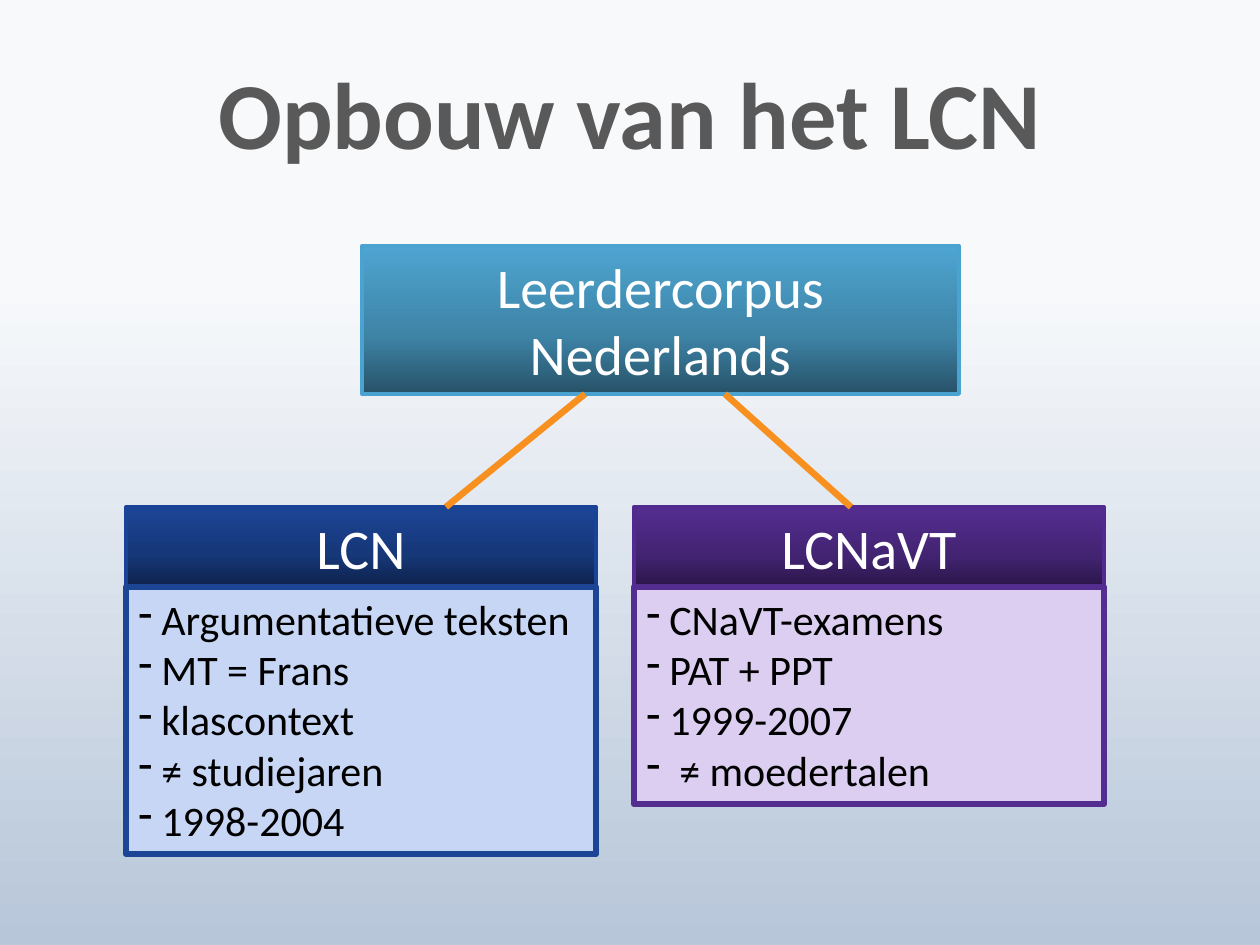
import copy

import pptx
import pptx.dml.color
import pptx.enum.shapes
import pptx.enum.text
import pptx.oxml.ns
import pptx.oxml.xmlchemy
import pptx.util

RGBColor = pptx.dml.color.RGBColor
PX = 914400 // 126
FONT = "Calibri"

WHITE = RGBColor(0xFF, 0xFF, 0xFF)
BLACK = RGBColor(0x00, 0x00, 0x00)
TITLE_GRAY = RGBColor(0x59, 0x59, 0x59)
ORANGE = RGBColor(0xF7, 0x90, 0x1E)
SKY_LINE = RGBColor(0x49, 0xA2, 0xD0)
BLUE = RGBColor(0x1C, 0x45, 0x96)
BLUE_LINE = RGBColor(0x18, 0x43, 0x96)
BLUE_PALE = RGBColor(0xC7, 0xD6, 0xF5)
PURPLE = RGBColor(0x54, 0x2D, 0x90)
PURPLE_LINE = RGBColor(0x52, 0x2A, 0x8F)
PURPLE_PALE = RGBColor(0xDB, 0xCE, 0xF0)

PAGE_STOPS = [(0.3, RGBColor(0xF7, 0xF9, 0xFB)), (1, RGBColor(0xB7, 0xC6, 0xD9))]
SKY_STOPS = [(0, RGBColor(0x4E, 0xA5, 0xD1)), (0.6, RGBColor(0x3E, 0x84, 0xA7)),
             (1, RGBColor(0x27, 0x52, 0x68))]
BLUE_STOPS = [(0, BLUE), (0.6, RGBColor(0x16, 0x37, 0x78)),
              (1, RGBColor(0x0E, 0x22, 0x4B))]
PURPLE_STOPS = [(0, PURPLE), (0.6, RGBColor(0x43, 0x24, 0x73)),
                (1, RGBColor(0x2A, 0x16, 0x48))]


def fill_downward(owner, fill, stops):
    """Give the fill a top-to-bottom gradient with any number of stops."""
    fill.gradient()
    fill.gradient_angle = 270
    stop_list = next(owner.element.iter(pptx.oxml.ns.qn("a:gsLst")))
    while len(stop_list) < len(stops):
        stop_list.append(copy.deepcopy(stop_list[0]))
    for stop, (position, color) in zip(fill.gradient_stops, stops):
        stop.position = position
        stop.color.rgb = color


def add_box(slide, bounds, line_color, line_width):
    shape = slide.shapes.add_shape(
        pptx.enum.shapes.MSO_SHAPE.RECTANGLE, *(value * PX for value in bounds))
    shape.shadow.inherit = False
    shape.line.color.rgb = line_color
    shape.line.width = pptx.util.Pt(line_width)
    shape.text_frame.word_wrap = True
    shape.text_frame.auto_size = pptx.enum.text.MSO_AUTO_SIZE.SHAPE_TO_FIT_TEXT
    shape.text_frame.vertical_anchor = pptx.enum.text.MSO_ANCHOR.TOP
    return shape


presentation = pptx.Presentation()
presentation.slide_width = pptx.util.Inches(10)
presentation.slide_height = pptx.util.Inches(7.5)
slide = presentation.slides.add_slide(presentation.slide_layouts[5])
fill_downward(slide, slide.background.fill, PAGE_STOPS)

# Title
title = slide.shapes.title
title.left, title.top, title.width, title.height = (
    value * PX for value in (126, 32, 1008, 174))
title.text_frame.vertical_anchor = pptx.enum.text.MSO_ANCHOR.MIDDLE
paragraph = title.text_frame.paragraphs[0]
paragraph.alignment = pptx.enum.text.PP_ALIGN.CENTER
paragraph.line_spacing = pptx.util.Pt(56)
run = paragraph.add_run()
run.text = "Opbouw van het LCN"
run.font.name = FONT
run.font.size = pptx.util.Pt(54)
run.font.bold = True
run.font.color.rgb = TITLE_GRAY

# Corpus and its two parts
headings = [
    ("Leerdercorpus Nederlands", (362, 246, 597, 148), SKY_STOPS, SKY_LINE),
    ("LCN", (126, 507, 470, 80), BLUE_STOPS, BLUE_LINE),
    ("LCNaVT", (634, 507, 470, 80), PURPLE_STOPS, PURPLE_LINE),
]
for text, bounds, stops, line_color in headings:
    heading = add_box(slide, bounds, line_color, 2.25)
    fill_downward(heading, heading.fill, stops)
    paragraph = heading.text_frame.paragraphs[0]
    paragraph.alignment = pptx.enum.text.PP_ALIGN.CENTER
    run = paragraph.add_run()
    run.text = text
    run.font.name = FONT
    run.font.size = pptx.util.Pt(32)
    run.font.color.rgb = WHITE

# Branches from the corpus to its parts
for start_x, end_x in [(585, 446), (725, 851)]:
    branch = slide.shapes.add_connector(
        pptx.enum.shapes.MSO_CONNECTOR.STRAIGHT,
        start_x * PX, 394 * PX, end_x * PX, 507 * PX)
    branch.line.color.rgb = ORANGE
    branch.line.width = pptx.util.Pt(3.75)
    branch.element.spPr.append(pptx.oxml.xmlchemy.OxmlElement("a:effectLst"))

# Features of each part: text and its indent in px
feature_lists = [
    ((126, 587, 470, 267), BLUE_PALE, BLUE,
     [("Argumentatieve teksten", 23), ("MT = Frans", 23), ("klascontext", 23),
      ("≠ studiejaren", 23), ("1998-2004", 23)]),
    ((634, 587, 470, 217), PURPLE_PALE, PURPLE,
     [("CNaVT-examens", 23), ("PAT + PPT", 23), ("1999-2007", 23),
      ("≠ moedertalen", 33)]),
]
for bounds, fill_color, line_color, features in feature_lists:
    box = add_box(slide, bounds, line_color, 3.75)
    box.fill.solid()
    box.fill.fore_color.rgb = fill_color
    for index, (text, indent) in enumerate(features):
        frame = box.text_frame
        paragraph = frame.add_paragraph() if index else frame.paragraphs[0]
        paragraph.alignment = pptx.enum.text.PP_ALIGN.LEFT
        properties = paragraph._p.get_or_add_pPr()
        properties.set("marL", str(indent * PX))
        properties.set("indent", str(-indent * PX))
        bullet = pptx.oxml.xmlchemy.OxmlElement("a:buChar")
        bullet.set("char", "-")
        properties.append(bullet)
        run = paragraph.add_run()
        run.text = text
        run.font.name = FONT
        run.font.size = pptx.util.Pt(24)
        run.font.color.rgb = BLACK

presentation.save("out.pptx")
